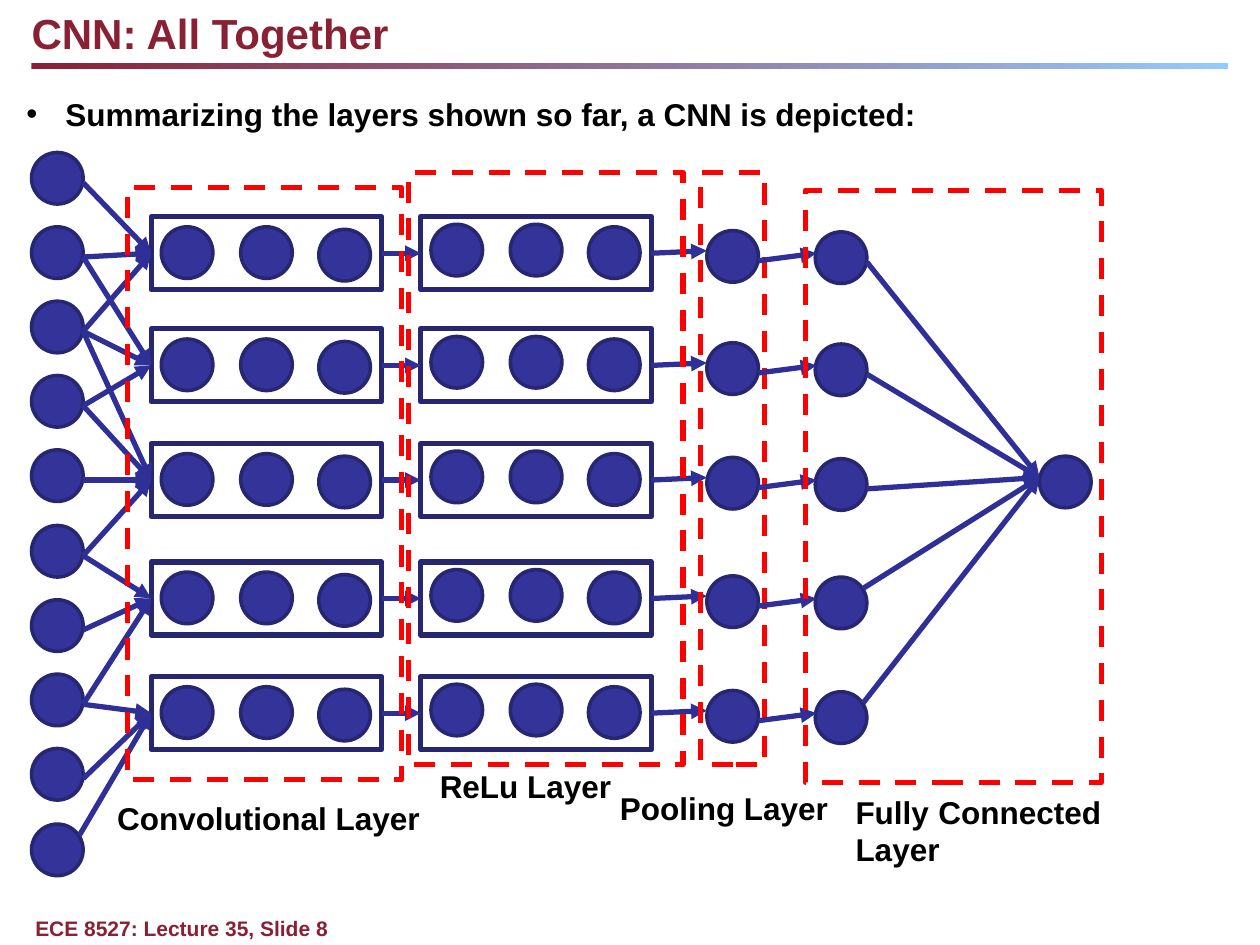
"""Build the slide that shows all layers of a CNN together."""
from dataclasses import dataclass

from lxml import etree
from pptx import Presentation
from pptx.dml.color import RGBColor
from pptx.enum.dml import MSO_LINE
from pptx.enum.shapes import MSO_CONNECTOR, MSO_SHAPE
from pptx.enum.text import MSO_ANCHOR, MSO_AUTO_SIZE, PP_ALIGN
from pptx.oxml.ns import qn
from pptx.util import Pt

DASH = MSO_LINE.DASH
STRAIGHT = MSO_CONNECTOR.STRAIGHT
OVAL, RECT = MSO_SHAPE.OVAL, MSO_SHAPE.RECTANGLE
TOP = MSO_ANCHOR.TOP
NO_FIT = MSO_AUTO_SIZE.NONE
LEFT, JUSTIFY = PP_ALIGN.LEFT, PP_ALIGN.JUSTIFY
LEFT_SIDE, RIGHT_SIDE = 1, 3
PX = 9144


@dataclass(frozen=True)
class Theme:
    font: str = "Arial"
    heading: str = "892034"
    bar_end: str = "95CAFF"
    text: str = "000000"
    node: str = "333399"
    outline: str = "262671"
    arrow: str = "2F2F98"
    frame: str = "FF0000"
    title_size: int = 24
    body_size: int = 18
    footer_size: int = 12
    thin: int = 2
    thick: int = 3


def rgb(value):
    return RGBColor.from_string(value)


class Deck:
    def __init__(self, theme, width, height):
        self.theme = theme
        self.prs = Presentation()
        self.prs.slide_width, self.prs.slide_height = width * PX, height * PX
        self.s = self.prs.slides.add_slide(self.prs.slide_layouts[1])

    def set_text(self, sp, text, size, color, align, indent=0):
        tf = sp.text_frame
        tf.word_wrap = True
        tf.auto_size = NO_FIT
        tf.vertical_anchor = TOP
        tf.margin_left = tf.margin_right = tf.margin_top = tf.margin_bottom = 0
        p = tf.paragraphs[0]
        p.alignment = align
        p.space_before = Pt(0)
        if indent:
            pPr = p._p.get_or_add_pPr()
            pPr.set("marL", str(indent * PX))
            pPr.set("indent", str(-indent * PX))
            etree.SubElement(pPr, qn("a:buChar")).set("char", "•")
        r = p.add_run()
        r.text = text
        r.font.name, r.font.size, r.font.bold = self.theme.font, Pt(size), True
        r.font.color.rgb = rgb(color)

    def place(self, sp, x, y, w, h):
        sp.left, sp.top, sp.width, sp.height = x * PX, y * PX, w * PX, h * PX

    def title(self, text, *box):
        sp = self.s.shapes.title
        self.place(sp, *box)
        self.set_text(sp, text, self.theme.title_size, self.theme.heading, LEFT)

    def bullet(self, text, indent, *box):
        sp = self.s.placeholders[1]
        self.place(sp, *box)
        self.set_text(sp, text, self.theme.body_size, self.theme.text, JUSTIFY, indent)

    def textbox(self, text, size, color, align, *box):
        sp = self.s.shapes.add_textbox(*(v * PX for v in box))
        self.set_text(sp, text, size, color, align)

    def label(self, text, *box):
        self.textbox(text, self.theme.body_size, self.theme.text, JUSTIFY, *box)

    def shape(self, kind, x, y, w, h):
        sp = self.s.shapes.add_shape(kind, x * PX, y * PX, w * PX, h * PX)
        sp.shadow.inherit = False
        return sp

    def bar(self, *box):
        sp = self.shape(RECT, *box)
        sp.line.fill.background()
        sp.fill.gradient()
        sp.fill.gradient_angle = 0
        for stop, color in zip(sp.fill.gradient_stops, (self.theme.heading, self.theme.bar_end)):
            stop.color.rgb = rgb(color)

    def node(self, x, y):
        sp = self.shape(OVAL, x, y, 41, 41)
        sp.fill.solid()
        sp.fill.fore_color.rgb = rgb(self.theme.node)
        sp.line.color.rgb = rgb(self.theme.outline)
        sp.line.width = Pt(self.theme.thin)

    def box(self, color, *box):
        sp = self.shape(RECT, *box)
        sp.fill.background()
        sp.line.color.rgb = rgb(color)
        sp.line.width = Pt(self.theme.thick)
        return sp

    def frame(self, *box):
        self.box(self.theme.frame, *box).line.dash_style = DASH

    def feature_map(self, x, y, node_dy):
        for dx, dy in ((8, 0), (71, 0), (133, 2)):
            self.node(x + dx, y + node_dy + dy)
        return self.box(self.theme.outline, x, y, 183, 58)

    def arrow(self, start=(0, 0), end=(0, 0), source=None, target=None):
        c = self.s.shapes.add_connector(STRAIGHT, *(v * PX for v in (*start, *end)))
        if source is not None:
            c.begin_connect(source, RIGHT_SIDE)
        if target is not None:
            c.end_connect(target, LEFT_SIDE)
        c.line.color.rgb = rgb(self.theme.arrow)
        c.line.width = Pt(self.theme.thick)
        spPr = c._element.spPr
        etree.SubElement(spPr.find(qn("a:ln")), qn("a:tailEnd")).set("type", "triangle")
        etree.SubElement(spPr, qn("a:effectLst"))


def main():
    theme = Theme()
    deck = Deck(theme, 1000, 750)
    deck.bar(25, 50, 950, 5)
    deck.textbox("ECE 8527: Lecture 35, Slide 8", theme.footer_size, theme.heading, LEFT,
                 28, 727, 892, 20)
    deck.title("CNN: All Together", 25, 6, 750, 40)
    deck.bullet("Summarizing the layers shown so far, a CNN is depicted:", 31, 21, 75, 943, 35)

    input_tops = [121 + 533 * i // 9 for i in range(10)]
    row_tops = (172, 261, 352, 446, 537)
    row_inputs = ((0, 1, 2), (1, 2, 3), (2, 3, 4, 5), (5, 6, 7), (7, 8, 9))
    input_ports = [(66, y + 24) for y in input_tops[:-1]] + [(63, input_tops[-1] + 9)]
    output_ports = ((688, 36), (688, 36), (688, 36), (685, 21), (685, 21))

    for y in input_tops:
        deck.node(25, y)
    deck.node(825, 362)
    for y, inputs, (port_x, port_dy) in zip(row_tops, row_inputs, output_ports):
        conv = deck.feature_map(120, y, 8)
        relu = deck.feature_map(334, y, 6)
        for i in inputs:
            deck.arrow(start=input_ports[i], target=conv)
        deck.arrow(source=conv, target=relu)
        deck.arrow(end=(561, y + 27), source=relu)
        deck.node(647, y + 12)
        deck.arrow(start=(port_x, y + port_dy), end=(825, 379))

    for box in ((101, 149, 218, 470), (324, 137, 218, 470), (556, 137, 51, 470)):
        deck.frame(*box)
    for y in row_tops:
        deck.node(561, y + 11)
        deck.arrow(start=(602, y + 35), end=(648, y + 29))
    deck.frame(639, 151, 235, 470)

    deck.label("Convolutional Layer", 93, 634, 250, 40)
    deck.label("ReLu Layer", 349, 609, 141, 40)
    deck.label("Pooling Layer", 492, 626, 179, 40)
    deck.label("Fully Connected Layer", 679, 629, 195, 74)
    deck.prs.save("out.pptx")


if __name__ == "__main__":
    main()
